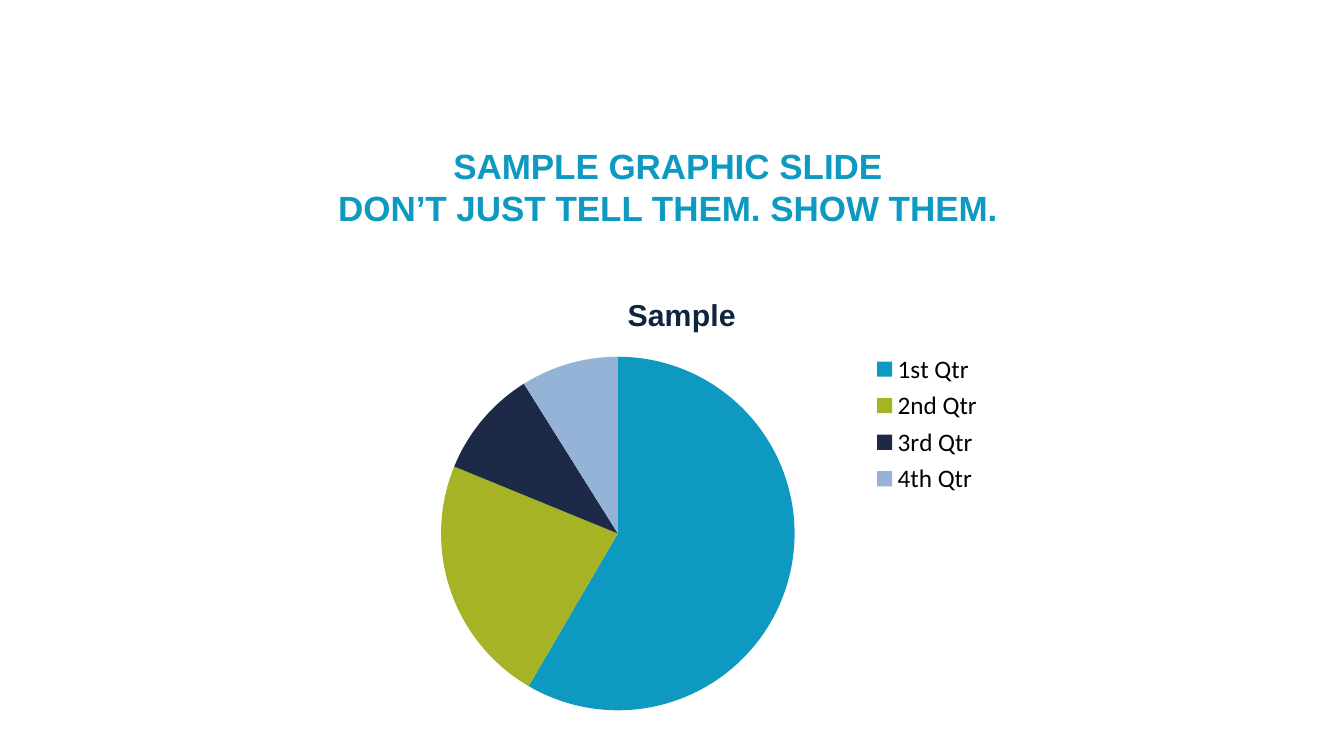
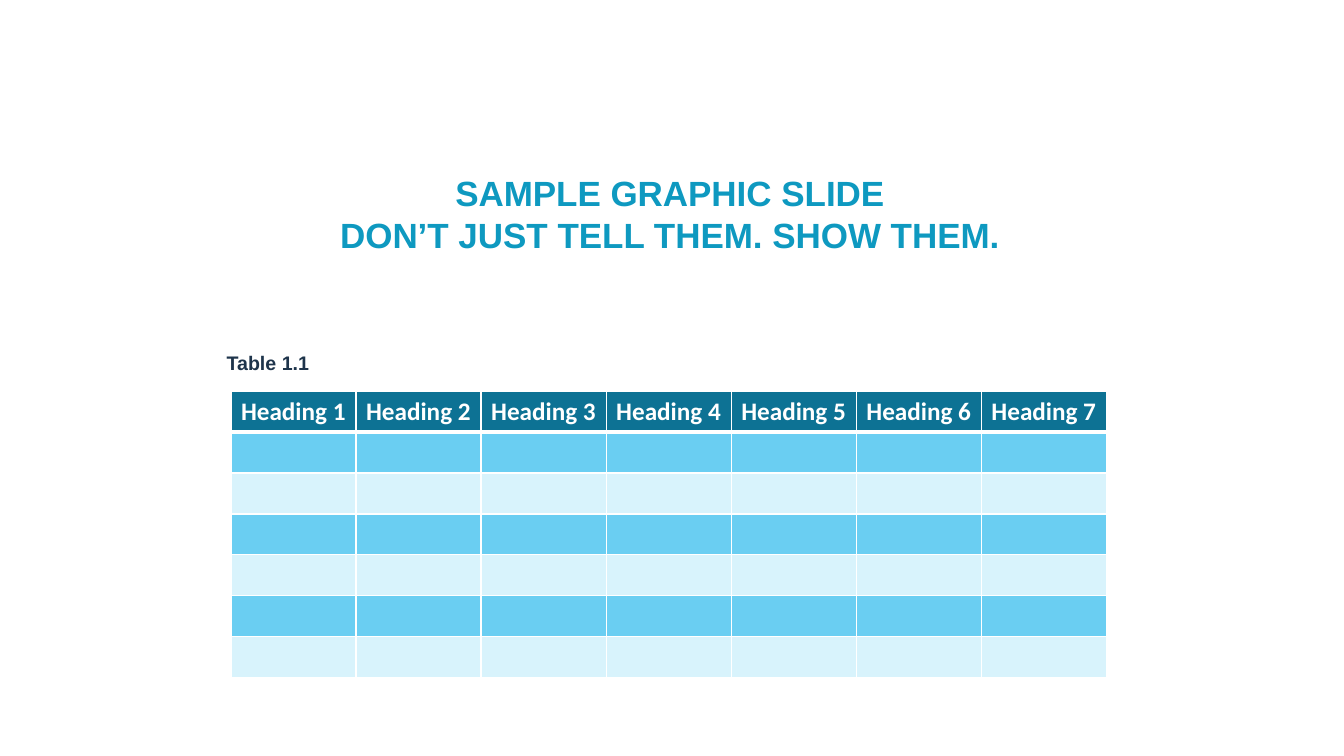
from dataclasses import dataclass

from lxml import etree
from pptx import Presentation
from pptx.chart.data import CategoryChartData
from pptx.dml.color import RGBColor
from pptx.enum.chart import XL_CHART_TYPE, XL_LEGEND_POSITION
from pptx.enum.text import MSO_ANCHOR, MSO_AUTO_SIZE, PP_ALIGN
from pptx.oxml.ns import qn
from pptx.util import Cm, Pt

PIE = XL_CHART_TYPE.PIE
LEGEND_RIGHT = XL_LEGEND_POSITION.RIGHT
MIDDLE, TOP = MSO_ANCHOR.MIDDLE, MSO_ANCHOR.TOP
GROW, FIXED = MSO_AUTO_SIZE.SHAPE_TO_FIT_TEXT, MSO_AUTO_SIZE.NONE
CENTER, LEFT = PP_ALIGN.CENTER, PP_ALIGN.LEFT

TEAL, WHITE, BLACK = "0E99C0", "FFFFFF", "000000"
CHART_TITLE_NAVY, CAPTION_NAVY = "0F243E", "1E344B"
HEADER_TEAL = "0D7294"
BAND_COLORS = ("6ACEF2", "D8F3FC")
HEADING_FONT, BODY_FONT = "Arial", "Calibri"
TITLE_LINES = ("SAMPLE GRAPHIC SLIDE", "DON’T JUST TELL THEM. SHOW THEM.")


@dataclass(frozen=True)
class Box:
    left: float
    top: float
    width: float
    height: float

    def lengths(self) -> tuple:
        return Cm(self.left), Cm(self.top), Cm(self.width), Cm(self.height)


@dataclass(frozen=True)
class TextStyle:
    size: float
    color: str
    font: str = HEADING_FONT
    bold: bool = True


@dataclass(frozen=True)
class Quarter:
    label: str
    value: int
    color: str


TITLE_STYLE = TextStyle(25, TEAL)
CAPTION_STYLE = TextStyle(14, CAPTION_NAVY)
CHART_TITLE_STYLE = TextStyle(21.6, CHART_TITLE_NAVY)
CHART_STYLE = TextStyle(18, BLACK, BODY_FONT, False)
HEADER_STYLE = TextStyle(18, WHITE, BODY_FONT)

QUARTERS = (
    Quarter("1st Qtr", 59, TEAL),
    Quarter("2nd Qtr", 23, "A5B324"),
    Quarter("3rd Qtr", 10, "1C2947"),
    Quarter("4th Qtr", 9, "95B3D7"),
)


def rgb(value: str) -> RGBColor:
    return RGBColor.from_string(value)


def apply_style(font, style: TextStyle) -> None:
    font.name = style.font
    font.size = Pt(style.size)
    font.bold = style.bold
    font.color.rgb = rgb(style.color)


def add_run(paragraph, text: str, style: TextStyle) -> None:
    run = paragraph.add_run()
    run.text = text
    apply_style(run.font, style)


def add_text(slide, box: Box, lines: tuple, style: TextStyle,
             align=LEFT, anchor=TOP, sizing=FIXED) -> None:
    frame = slide.shapes.add_textbox(*box.lengths()).text_frame
    frame.word_wrap = True
    frame.auto_size = sizing
    frame.vertical_anchor = anchor
    paragraph = frame.paragraphs[0]
    paragraph.alignment = align
    for index, line in enumerate(lines):
        if index:
            paragraph.add_line_break()
        add_run(paragraph, line, style)


def add_title(slide, left: float, top: float) -> None:
    add_text(slide, Box(left, top, 27.66, 2.62), TITLE_LINES, TITLE_STYLE,
             CENTER, MIDDLE)


def set_layout(parent, position: int, target: str, x: float, y: float,
               w: float, h: float) -> None:
    for old in parent.findall(qn("c:layout")):
        parent.remove(old)
    layout = etree.Element(qn("c:layout"))
    manual = etree.SubElement(layout, qn("c:manualLayout"))
    settings = [("layoutTarget", target)] if target else []
    settings += [("xMode", "edge"), ("yMode", "edge"),
                 ("x", x), ("y", y), ("w", w), ("h", h)]
    for tag, value in settings:
        etree.SubElement(manual, qn(f"c:{tag}")).set("val", str(value))
    parent.insert(position, layout)


def add_quarter_pie(slide, box: Box) -> None:
    data = CategoryChartData()
    data.categories = [quarter.label for quarter in QUARTERS]
    data.add_series("Series 1", [quarter.value for quarter in QUARTERS])
    chart = slide.shapes.add_chart(PIE, *box.lengths(), data).chart
    apply_style(chart.font, CHART_STYLE)

    chart.has_title = True
    add_run(chart.chart_title.text_frame.paragraphs[0], "Sample",
            CHART_TITLE_STYLE)
    chart.chart_title.include_in_layout = False

    chart.has_legend = True
    legend = chart.legend
    legend.position = LEGEND_RIGHT
    legend.include_in_layout = False
    apply_style(legend.font, CHART_STYLE)

    plot = chart.plots[0]
    plot.vary_by_categories = True
    for index, quarter in enumerate(QUARTERS):
        fill = plot.series[0].points[index].format.fill
        fill.solid()
        fill.fore_color.rgb = rgb(quarter.color)

    plot_area = chart.element.find(".//" + qn("c:plotArea"))
    legend_element = chart.element.find(".//" + qn("c:legend"))
    set_layout(plot_area, 0, "inner", 0.14, 0.18, 0.53, 0.79)
    set_layout(legend_element, 1, "", 0.78, 0.16, 0.17, 0.34)


def set_borders(cell, top: float, bottom: float) -> None:
    properties = cell._tc.get_or_add_tcPr()
    sides = (("lnL", 1), ("lnR", 1), ("lnT", top), ("lnB", bottom))
    for index, (side, width) in enumerate(sides):
        line = etree.Element(qn(f"a:{side}"), w=str(Pt(width)))
        fill = etree.SubElement(line, qn("a:solidFill"))
        etree.SubElement(fill, qn("a:srgbClr")).set("val", WHITE)
        properties.insert(index, line)


def add_banded_table(slide, box: Box, rows: int, columns: int) -> None:
    table = slide.shapes.add_table(rows, columns, *box.lengths()).table
    table.first_row = False
    table.horz_banding = False
    for row in range(rows):
        for column in range(columns):
            cell = table.cell(row, column)
            color = BAND_COLORS[(row - 1) % 2] if row else HEADER_TEAL
            cell.fill.solid()
            cell.fill.fore_color.rgb = rgb(color)
            set_borders(cell, 3 if row == 1 else 1, 1 if row else 3)
            if row == 0:
                add_run(cell.text_frame.paragraphs[0],
                        f"Heading {column + 1}", HEADER_STYLE)


def build_chart_slide(slide) -> None:
    add_title(slide, 3, 3.4)
    add_quarter_pie(slide, Box(8.71, 6.96, 16.94, 11.28))


def build_table_slide(slide) -> None:
    add_title(slide, 3.05, 4.06)
    add_banded_table(slide, Box(5.82, 9.86, 22.07, 7.21), 7, 7)
    add_text(slide, Box(5.46, 8.71, 6.73, 0.86), ("Table 1.1",),
             CAPTION_STYLE, sizing=GROW)


def main() -> None:
    deck = Presentation()
    deck.slide_width = Cm(33.87)
    deck.slide_height = Cm(19.05)
    blank = deck.slide_layouts[6]
    for build in (build_chart_slide, build_table_slide):
        build(deck.slides.add_slide(blank))
    deck.save("out.pptx")


if __name__ == "__main__":
    main()
